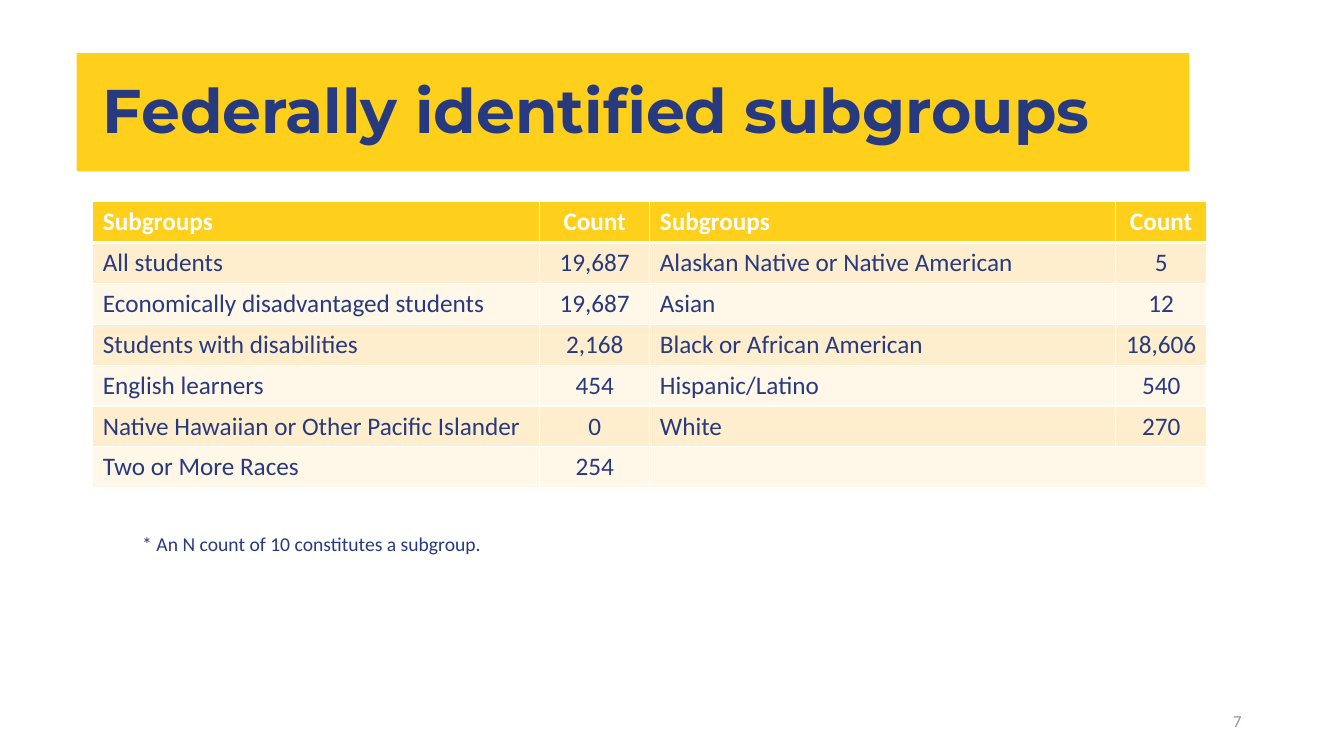
"""Build the slide of federally identified subgroups and their counts."""
from lxml import etree
from pptx import Presentation
from pptx.dml.color import RGBColor
from pptx.enum.shapes import MSO_SHAPE
from pptx.enum.text import MSO_ANCHOR, PP_ALIGN
from pptx.oxml.ns import qn
from pptx.util import Pt

RECTANGLE = MSO_SHAPE.RECTANGLE
TOP, MIDDLE = MSO_ANCHOR.TOP, MSO_ANCHOR.MIDDLE
LEFT, CENTER, RIGHT = PP_ALIGN.LEFT, PP_ALIGN.CENTER, PP_ALIGN.RIGHT

YELLOW = RGBColor(0xFF, 0xD0, 0x1B)
NAVY = RGBColor(0x27, 0x3A, 0x7F)
WHITE = RGBColor(0xFF, 0xFF, 0xFF)
GREY = RGBColor(0x8E, 0x91, 0xAB)
BANDS = [RGBColor(0xFF, 0xEE, 0xCD), RGBColor(0xFF, 0xF7, 0xE8)]

TITLE = "Federally identified subgroups"
NOTE = "* An N count of 10 constitutes a subgroup."
PAGE = "7"
ROWS = [
    ("Subgroups", "Count", "Subgroups", "Count"),
    ("All students", "19,687", "Alaskan Native or Native American", "5"),
    ("Economically disadvantaged students", "19,687", "Asian", "12"),
    ("Students with disabilities", "2,168", "Black or African American", "18,606"),
    ("English learners", "454", "Hispanic/Latino", "540"),
    ("Native Hawaiian or Other Pacific Islander", "0", "White", "270"),
    ("Two or More Races", "254", "", ""),
]
COLUMN_WIDTHS = [319.2, 78.7, 332.8, 64.9]
ROW_HEIGHT = 29.2
TABLE_LEFT, TABLE_TOP = 66.3, 144


def write(tf, text, size=18, color=NAVY, font="Calibri", bold=False, align=LEFT, spacing=1.0):
    """Put one formatted paragraph in a text frame."""
    p = tf.paragraphs[0]
    p.alignment = align
    p.line_spacing = spacing
    r = p.add_run()
    r.text = text
    r.font.size = Pt(size)
    r.font.name = font
    r.font.bold = bold
    r.font.color.rgb = color


def add_text(s, box, text, anchor=TOP, **style):
    """Add a wrapping text box at box (left, top, width, height)."""
    tf = s.shapes.add_textbox(*map(Pt, box)).text_frame
    tf.word_wrap = True
    tf.vertical_anchor = anchor
    write(tf, text, **style)


def add_borders(cell, bottom):
    """Draw white cell borders, with the bottom one in its own width."""
    tcPr = cell._tc.get_or_add_tcPr()
    for side, width in (("L", 1), ("R", 1), ("T", 1), ("B", bottom)):
        ln = etree.SubElement(tcPr, qn(f"a:ln{side}"), w=str(Pt(width)))
        fill = etree.SubElement(ln, qn("a:solidFill"))
        etree.SubElement(fill, qn("a:srgbClr"), val=str(WHITE))


def add_subgroup_table(s):
    """Add the banded table of subgroups and counts."""
    table = s.shapes.add_table(
        len(ROWS), len(COLUMN_WIDTHS), Pt(TABLE_LEFT), Pt(TABLE_TOP),
        Pt(sum(COLUMN_WIDTHS)), Pt(ROW_HEIGHT * len(ROWS))).table
    for column, width in zip(table.columns, COLUMN_WIDTHS):
        column.width = Pt(width)
    for i, row in enumerate(ROWS):
        table.rows[i].height = Pt(ROW_HEIGHT)
        header = i == 0
        for j, text in enumerate(row):
            cell = table.cell(i, j)
            add_borders(cell, 3 if header else 1)
            cell.fill.solid()
            cell.fill.fore_color.rgb = YELLOW if header else BANDS[(i - 1) % 2]
            if text:
                write(cell.text_frame, text, color=WHITE if header else NAVY,
                      bold=header, align=CENTER if j % 2 else LEFT)
    last = len(ROWS) - 1
    table.cell(last, 2).merge(table.cell(last, 3))


def main():
    """Build and save the slide."""
    prs = Presentation()
    prs.slide_width, prs.slide_height = Pt(960), Pt(540)
    s = prs.slides.add_slide(prs.slide_layouts[6])

    banner = s.shapes.add_shape(RECTANGLE, Pt(54.8), Pt(38), Pt(794.8), Pt(84.4))
    banner.shadow.inherit = False
    banner.fill.solid()
    banner.fill.fore_color.rgb = YELLOW
    banner.line.fill.background()

    add_text(s, (66.3, 28.8, 785.5, 104.4), TITLE, anchor=MIDDLE, size=44,
             font="Montserrat", bold=True, spacing=0.9)
    add_subgroup_table(s)
    add_text(s, (678, 500.5, 216, 28.8), PAGE, anchor=MIDDLE, size=12, color=GREY, align=RIGHT)
    add_text(s, (94.5, 376.6, 536.4, 24.5), NOTE, size=14)
    prs.save("out.pptx")


if __name__ == "__main__":
    main()
